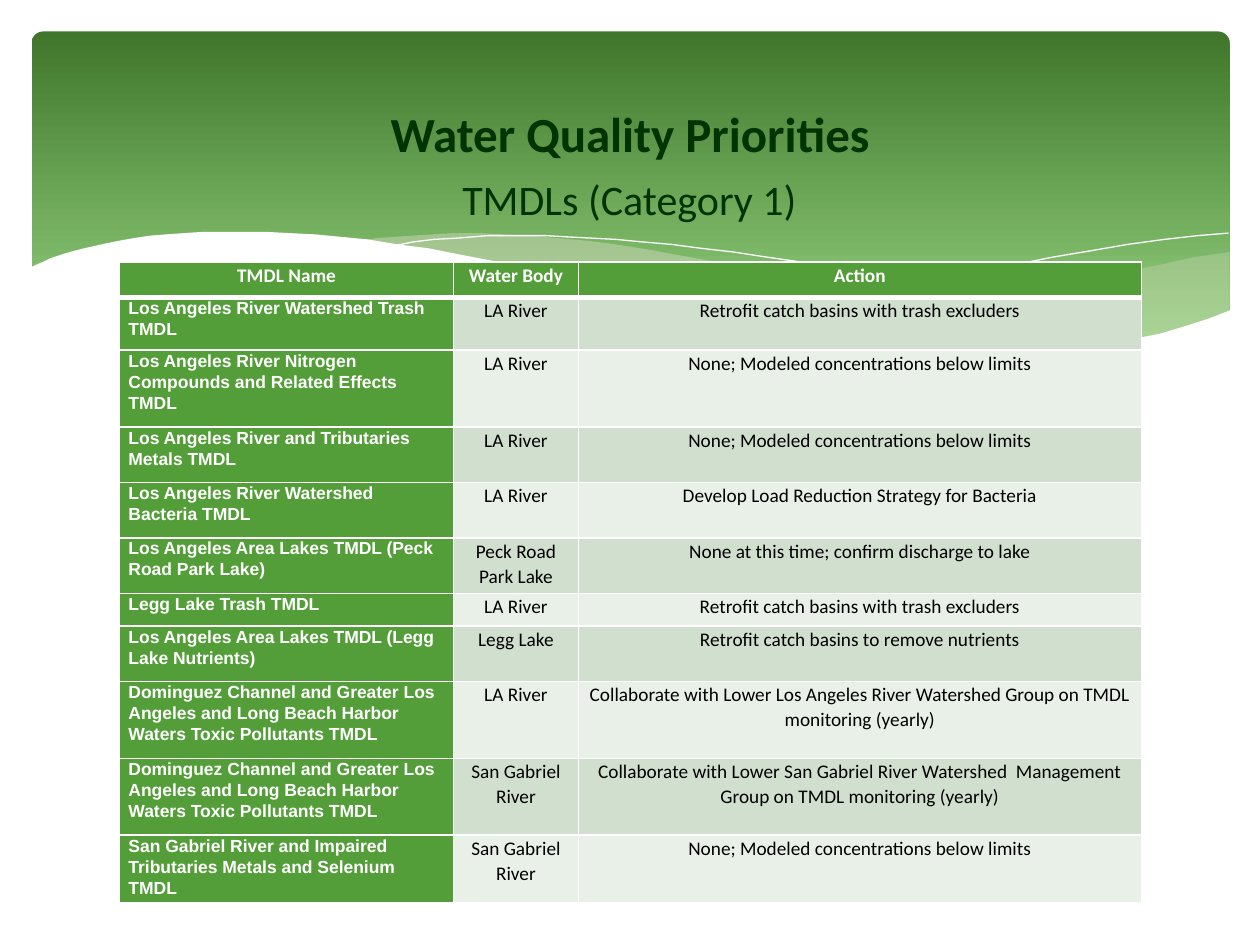
from lxml.etree import SubElement
from pptx import Presentation
from pptx.dml.color import RGBColor
from pptx.enum.shapes import MSO_SHAPE
from pptx.enum.text import MSO_ANCHOR, PP_ALIGN
from pptx.oxml.ns import qn
from pptx.util import Inches, Pt

WHITE, DARK_GREEN, GREEN = "FFFFFF", "003300", "549E39"
BANDS = ["D1DFCE", "E9F0E8"]

RIGHT_WAVE = [
    (9.76, 2), (9.62, 2.02), (9.48, 2.04), (9.21, 2.1), (8.91, 2.16), (8.61, 2.23),
    (8.32, 2.3), (8.05, 2.37), (7.79, 2.42), (7.53, 2.48), (7.29, 2.53), (7.06, 2.57),
    (6.83, 2.62), (6.61, 2.65), (6.91, 2.69), (7.19, 2.72), (7.45, 2.75), (7.69, 2.77),
    (8.03, 2.78), (8.35, 2.77), (8.63, 2.75), (8.81, 2.73), (8.97, 2.7), (9.13, 2.67),
    (9.28, 2.63), (9.42, 2.59), (9.63, 2.52), (9.76, 2.47),
]
MIDDLE_WAVE = [
    (8.93, 2.73), (8.66, 2.69), (8.37, 2.65), (8.07, 2.6), (7.75, 2.54), (7.41, 2.47),
    (7.06, 2.4), (6.68, 2.31), (6.29, 2.22), (5.98, 2.14), (5.69, 2.08), (5.41, 2.03),
    (5.14, 1.98), (4.89, 1.94), (4.65, 1.91), (4.42, 1.89), (4.2, 1.87), (3.99, 1.86),
    (3.8, 1.85), (3.61, 1.85), (3.44, 1.86), (3.28, 1.87), (3.13, 1.88), (2.99, 1.89),
    (2.86, 1.91), (3.04, 1.94), (3.23, 1.96), (3.42, 1.99), (3.62, 2.03), (3.83, 2.07),
    (4.04, 2.11), (4.27, 2.16), (4.49, 2.22), (4.91, 2.32), (5.3, 2.4), (5.66, 2.48),
    (6.01, 2.55), (6.34, 2.61), (6.65, 2.66), (6.95, 2.7), (7.22, 2.74), (7.48, 2.76),
    (7.73, 2.77), (7.96, 2.78), (8.28, 2.78), (8.57, 2.77), (8.76, 2.75),
]
LONG_CREST = [
    (3.09, 1.95), (3.18, 1.94), (3.28, 1.92), (3.44, 1.9), (3.63, 1.89), (3.87, 1.87),
    (4.16, 1.87), (4.33, 1.87), (4.5, 1.88), (4.69, 1.89), (4.89, 1.9), (5.1, 1.92),
    (5.33, 1.94), (5.56, 1.97), (5.82, 2), (6.08, 2.04), (6.36, 2.08), (6.65, 2.13),
    (6.95, 2.19), (7.27, 2.26), (7.6, 2.33), (7.95, 2.41), (8.31, 2.51), (8.69, 2.61),
    (9.07, 2.72),
]
RIGHT_CREST = [
    (6.13, 2.57), (6.24, 2.54), (6.53, 2.46), (6.95, 2.35), (7.2, 2.29), (7.48, 2.23),
    (7.76, 2.16), (8.06, 2.1), (8.36, 2.04), (8.66, 1.99), (8.95, 1.94), (9.24, 1.9),
    (9.51, 1.87), (9.75, 1.85),
]
WHITE_WAVE = [
    (9.77, 2.46), (9.59, 2.53), (9.4, 2.59), (9.2, 2.65), (8.99, 2.69), (8.75, 2.73),
    (8.5, 2.75), (8.23, 2.77), (7.93, 2.76), (7.61, 2.75), (7.26, 2.72), (6.88, 2.68),
    (6.48, 2.62), (6.03, 2.54), (5.79, 2.5), (5.55, 2.45), (5.29, 2.39), (5.03, 2.33),
    (4.75, 2.27), (4.47, 2.2), (4.18, 2.13), (3.91, 2.07), (3.65, 2.02), (3.4, 1.97),
    (3.16, 1.94), (2.92, 1.9), (2.71, 1.88), (2.5, 1.86), (2.3, 1.85), (2.11, 1.84),
    (1.77, 1.84), (1.61, 1.84), (1.46, 1.85), (1.32, 1.86), (1.19, 1.87), (1.06, 1.89),
    (0.95, 1.91), (0.85, 1.93), (0.76, 1.95), (0.67, 1.97), (0.59, 1.99), (0.52, 2.01),
    (0.46, 2.03), (0.4, 2.05), (0.36, 2.07), (0.29, 2.1), (0.23, 2.13), (0.23, 3.29),
    (9.77, 3.29),
]

NO_ACTION = "None; Modeled concentrations below limits"
TRASH_ACTION = "Retrofit catch basins with trash excluders"
HARBOR_TMDL = ("Dominguez Channel and Greater Los Angeles and Long Beach Harbor "
               "Waters Toxic Pollutants TMDL")
COLUMN_WIDTHS = [2.65, 0.99, 4.47]
TMDL_ROWS = [  # row height, then the three cells
    (0.28, "TMDL Name", "Water Body", "Action"),
    (0.42, "Los Angeles River Watershed Trash TMDL", "LA River", TRASH_ACTION),
    (0.61, "Los Angeles River Nitrogen Compounds and Related Effects TMDL", "LA River",
     NO_ACTION),
    (0.44, "Los Angeles River and Tributaries Metals TMDL", "LA River", NO_ACTION),
    (0.44, "Los Angeles River Watershed Bacteria TMDL", "LA River",
     "Develop Load Reduction Strategy for Bacteria"),
    (0.44, "Los Angeles Area Lakes TMDL (Peck Road Park Lake)", "Peck Road Park Lake",
     "None at this time; confirm discharge to lake"),
    (0.26, "Legg Lake Trash TMDL", "LA River", TRASH_ACTION),
    (0.44, "Los Angeles Area Lakes TMDL (Legg Lake Nutrients)", "Legg Lake",
     "Retrofit catch basins to remove nutrients"),
    (0.61, HARBOR_TMDL, "LA River",
     "Collaborate with Lower Los Angeles River Watershed Group on TMDL monitoring (yearly)"),
    (0.61, HARBOR_TMDL, "San Gabriel River",
     "Collaborate with Lower San Gabriel River Watershed  Management Group on TMDL "
     "monitoring (yearly)"),
    (0.53, "San Gabriel River and Impaired Tributaries Metals and Selenium TMDL",
     "San Gabriel River", NO_ACTION),
]


def rgb(code):
    return RGBColor.from_string(code)


class SlideBuilder:
    def __init__(self, slide, font="Calibri"):
        self.slide = slide
        self.font = font

    def banner(self, left, top, width, height):
        banner = self.slide.shapes.add_shape(
            MSO_SHAPE.ROUNDED_RECTANGLE, *map(Inches, (left, top, width, height)))
        banner.adjustments[0] = 0.034
        banner.shadow.inherit = False
        banner.line.fill.background()
        banner.fill.gradient()
        banner.fill.gradient_angle = 270
        stops = zip(banner.fill.gradient_stops, (0, 0.9), ("3F762B", "93D07D"))
        for stop, position, color in stops:
            stop.position = position
            stop.color.rgb = rgb(color)

    def outline(self, points, closed):
        start, *others = [(Inches(x), Inches(y)) for x, y in points]
        builder = self.slide.shapes.build_freeform(*start)
        builder.add_line_segments(others, close=closed)
        outline = builder.convert_to_shape()
        outline.shadow.inherit = False
        return outline

    def wave(self, points, color, opacity=100):
        wave = self.outline(points, closed=True)
        wave.line.fill.background()
        wave.fill.solid()
        wave.fill.fore_color.rgb = rgb(color)
        if opacity < 100:
            color_element = wave.element.spPr.find(qn("a:solidFill")).find(qn("a:srgbClr"))
            SubElement(color_element, qn("a:alpha"), val=str(opacity * 1000))

    def crest(self, points):
        crest = self.outline(points, closed=False)
        crest.fill.background()
        crest.line.color.rgb = rgb(WHITE)
        crest.line.width = Pt(0)

    def set_text(self, frame, text, size, color, bold=False, align=PP_ALIGN.CENTER, font=None):
        frame.text = text
        frame.word_wrap = True
        paragraph = frame.paragraphs[0]
        paragraph.alignment = align
        for run in paragraph.runs:
            run.font.name = font or self.font
            run.font.size = Pt(size)
            run.font.bold = bold
            run.font.color.rgb = rgb(color)
        return paragraph

    def heading(self, box, text, size, bold=False, anchor=MSO_ANCHOR.TOP):
        frame = self.slide.shapes.add_textbox(*map(Inches, box)).text_frame
        self.set_text(frame, text, size, DARK_GREEN, bold)
        frame.vertical_anchor = anchor

    def borders(self, cell, **widths):
        """Draw white cell borders; widths maps L, R, T, B to points."""
        for side, width in widths.items():
            border = SubElement(cell._tc.get_or_add_tcPr(), qn("a:ln" + side),
                                w=str(Pt(width)))
            SubElement(SubElement(border, qn("a:solidFill")), qn("a:srgbClr"), val=WHITE)

    def table(self, left, top, widths, rows):
        heights = [row[0] for row in rows]
        table = self.slide.shapes.add_table(
            len(rows), len(widths), Inches(left), Inches(top),
            Inches(sum(widths)), Inches(sum(heights))).table
        for column, width in zip(table.columns, widths):
            column.width = Inches(width)
        for r, (height, *texts) in enumerate(rows):
            table.rows[r].height = Inches(height)
            for c, text in enumerate(texts):
                self.cell(table.cell(r, c), text, r, c)

    def cell(self, cell, text, row, column):
        header, name = row == 0, column == 0
        cell.margin_left = cell.margin_right = Inches(0.07)
        cell.margin_top = cell.margin_bottom = 0
        if name and not header:
            style = dict(size=10, color=WHITE, bold=True, align=PP_ALIGN.LEFT, font="Arial")
        else:
            style = dict(size=11, color=WHITE if header else "000000", bold=header)
        self.set_text(cell.text_frame, text, **style).line_spacing = 1.07
        self.borders(cell, L=1, R=1, T=3 if row == 1 else 1, B=3 if header else 1)
        cell.fill.solid()
        cell.fill.fore_color.rgb = rgb(GREEN if header or name else BANDS[(row - 1) % 2])


def main():
    deck = Presentation()
    deck.slide_width, deck.slide_height = Inches(10), Inches(7.5)
    builder = SlideBuilder(deck.slides.add_slide(deck.slide_layouts[6]))
    builder.banner(0.25, 0.25, 9.51, 2.7)
    builder.wave(RIGHT_WAVE, "E3DED1", opacity=29)
    builder.wave(MIDDLE_WAVE, "E3DED1", opacity=40)
    builder.crest(LONG_CREST)
    builder.crest(RIGHT_CREST)
    builder.wave(WHITE_WAVE, WHITE)
    builder.heading((0.82, 1.33, 8.35, 2.62), "TMDLs (Category 1)", 24)
    builder.heading((0.5, 0.37, 9, 1.37), "Water Quality Priorities", 28, bold=True,
                    anchor=MSO_ANCHOR.MIDDLE)
    builder.table(0.95, 2.08, COLUMN_WIDTHS, TMDL_ROWS)
    deck.save("out.pptx")


if __name__ == "__main__":
    main()
